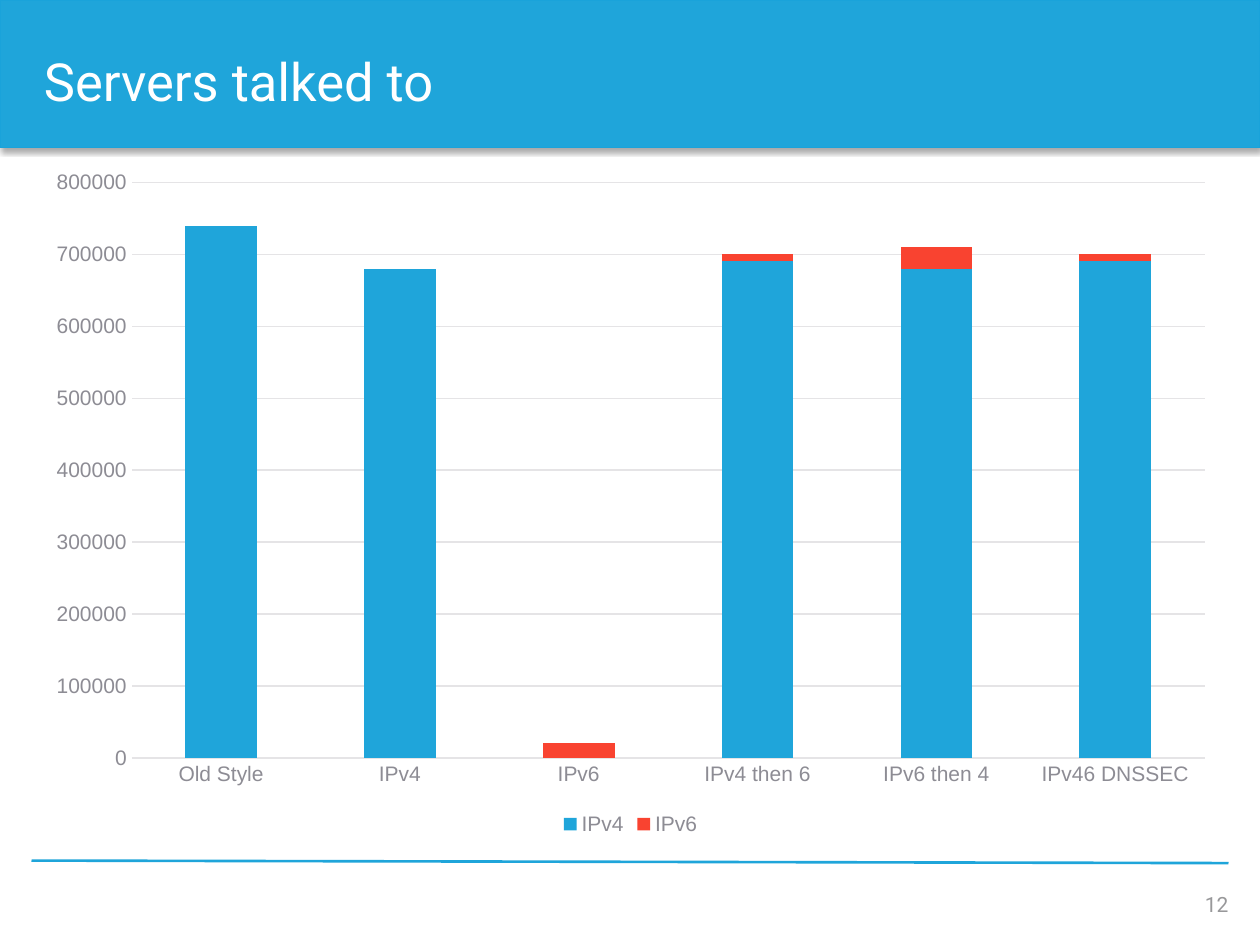
from lxml import etree
from pptx import Presentation
from pptx.chart.data import CategoryChartData as ChartData
from pptx.dml.color import RGBColor
from pptx.enum.chart import XL_CHART_TYPE as Kind, XL_LEGEND_POSITION as Place
from pptx.enum.chart import XL_TICK_MARK as Tick
from pptx.enum.shapes import MSO_CONNECTOR as Link, MSO_SHAPE as Form
from pptx.enum.text import MSO_ANCHOR as Anchor, PP_ALIGN as Align
from pptx.oxml import parse_xml
from pptx.oxml.ns import qn
from pptx.util import Pt

# Content
TITLE = "Servers talked to"
NUMBER = "12"
CATS = ["Old Style", "IPv4", "IPv6", "IPv4 then 6", "IPv6 then 4", "IPv46 DNSSEC"]
SERIES = [
    ("IPv4", "1FA5DA", [740000, 680000, 0, 690000, 680000, 690000]),
    ("IPv6", "F94330", [0, 0, 20000, 10000, 30000, 10000]),
]
BLUE, EDGE, PALE, GREY = "1FA5DA", "1AA3DA", "E5E4E6", "8D8C94"

SHADOW = """<a:effectLst xmlns:a="http://schemas.openxmlformats.org/drawingml/2006/main">
<a:outerShdw blurRad="39370" dist="22860" dir="5400000" rotWithShape="0">
<a:srgbClr val="000000"><a:alpha val="35000"/></a:srgbClr>
</a:outerShdw></a:effectLst>"""


def rgb(code):
    return RGBColor.from_string(code)


def box(x, y, w, h):
    return Pt(x), Pt(y), Pt(w), Pt(h)


def stroke(line, code, width):
    line.color.rgb = rgb(code)
    line.width = Pt(width)


def style(font, name, size, code):
    font.name, font.size, font.color.rgb = name, Pt(size), rgb(code)


def label(place, text, size, code):
    frame = slide.shapes.add_textbox(*place).text_frame
    frame.word_wrap = True
    frame.vertical_anchor = Anchor.MIDDLE
    para = frame.paragraphs[0]
    para.text = text
    style(para.font, "Roboto", size, code)
    return frame, para


deck = Presentation()
deck.slide_width, deck.slide_height = Pt(720), Pt(540)
slide = deck.slides.add_slide(deck.slide_layouts[6])

# Header band with a soft shadow below
band = slide.shapes.add_shape(Form.RECTANGLE, *box(0, 0, 720, 84.24))
band.fill.solid()
band.fill.fore_color.rgb = rgb(BLUE)
stroke(band.line, EDGE, 0.75)
band._element.spPr.append(parse_xml(SHADOW))

# Footer rule
rule = slide.shapes.add_connector(Link.STRAIGHT, *box(18, 491.76, 702, 493.2))
stroke(rule.line, BLUE, 1.5)
etree.SubElement(rule._element.spPr, qn("a:effectLst"))

# Stacked column chart
data = ChartData()
data.categories = CATS
for name, _, vals in SERIES:
    data.add_series(name, vals)
chart = slide.shapes.add_chart(
    Kind.COLUMN_STACKED, *box(18.72, 90, 683.28, 390.24), data).chart
style(chart.font, "Arial", 12, GREY)
chart.has_title = False

plot = chart.plots[0]
plot.gap_width, plot.overlap = 150, 100
plot.vary_by_categories = False
for bar, (_, code, _) in zip(plot.series, SERIES):
    bar.format.fill.solid()
    bar.format.fill.fore_color.rgb = rgb(code)

cats, vals = chart.category_axis, chart.value_axis
for axis in (cats, vals):
    axis.major_tick_mark = axis.minor_tick_mark = Tick.NONE
    style(axis.tick_labels.font, "Arial", 12, GREY)
stroke(cats.format.line, PALE, 0.75)
vals.format.line.fill.background()
vals.has_major_gridlines = True
stroke(vals.major_gridlines.format.line, PALE, 0.75)
vals.minimum_scale, vals.maximum_scale, vals.major_unit = 0, 800000, 100000
vals.tick_labels.number_format = "General"
vals.tick_labels.number_format_is_linked = False

chart.has_legend = True
chart.legend.position = Place.BOTTOM
chart.legend.include_in_layout = False
style(chart.legend.font, "Arial", 12, GREY)

# Slide number
frame, para = label(box(534.24, 493.2, 167.76, 28.8), NUMBER, 12, "98989A")
frame.margin_left = frame.margin_right = frame.margin_bottom = 0
frame.margin_top = Pt(18)
para.alignment = Align.RIGHT

# Title
_, para = label(box(18, 18.72, 684.72, 59.76), TITLE, 30, "FFFFFF")
para.line_spacing = 0.9

deck.save("out.pptx")
